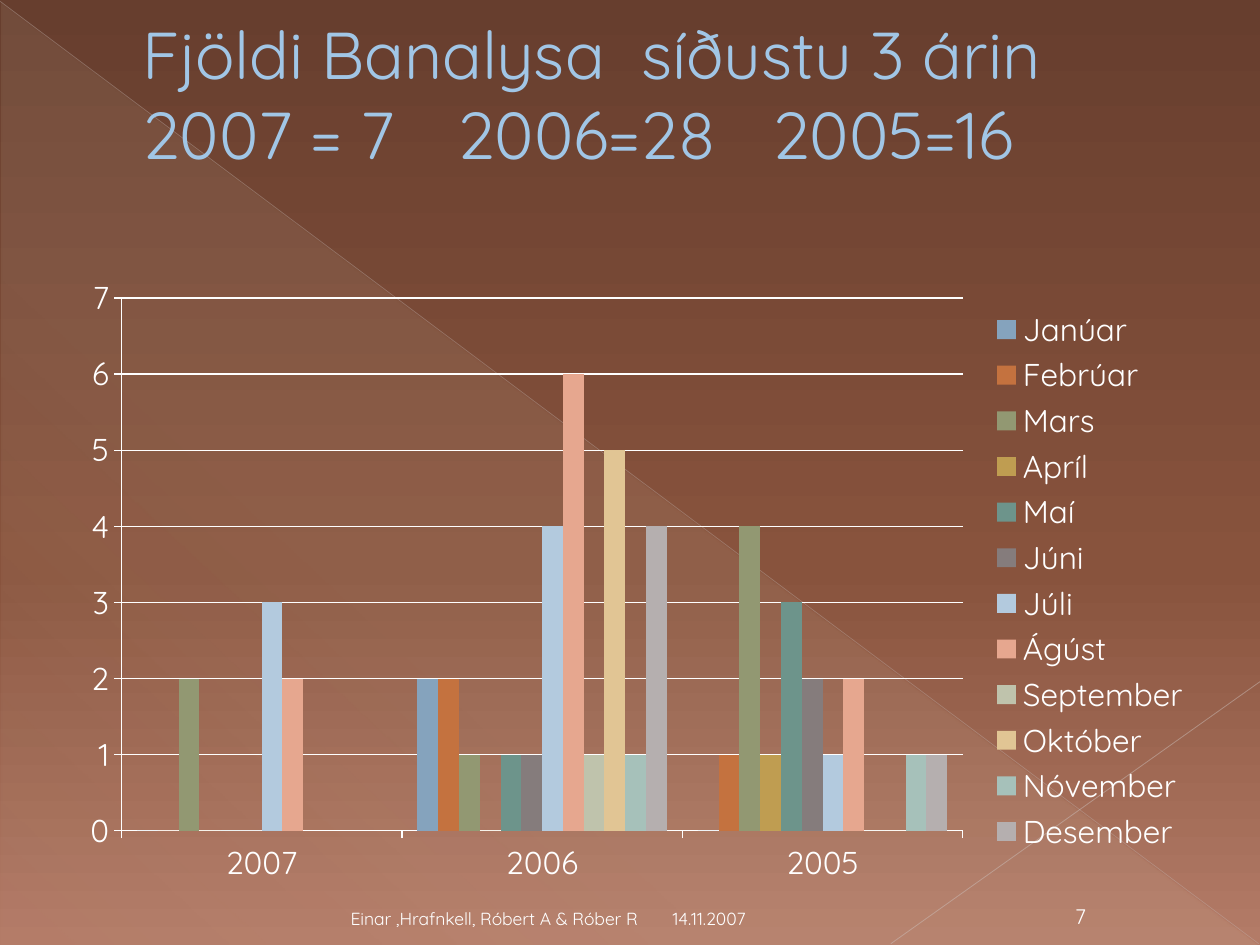
import lxml.etree
import pptx
import pptx.chart.data
import pptx.dml.color
import pptx.enum.chart
import pptx.enum.shapes
import pptx.enum.text
import pptx.oxml
import pptx.oxml.ns
import pptx.util

Inches, Pt = pptx.util.Inches, pptx.util.Pt
qn = pptx.oxml.ns.qn
Align, Anchor = pptx.enum.text.PP_ALIGN, pptx.enum.text.MSO_ANCHOR

TITLE = "Fjöldi Banalysa  síðustu 3 árin\v2007 = 7\t2006=28\t2005=16\v"
YEARS = ["2007", "2006", "2005"]
MONTHS = [
    ("Janúar", (0, 2, 0), "85A3BD"),
    ("Febrúar", (0, 2, 1), "C4723F"),
    ("Mars", (2, 1, 4), "929872"),
    ("Apríl ", (0, 0, 1), "BF9D51"),
    ("Maí", (0, 1, 3), "6D948B"),
    ("Júni", (0, 1, 2), "857C7C"),
    ("Júli ", (3, 4, 1), "B3CADE"),
    ("Ágúst", (2, 6, 2), "E6A78F"),
    ("September", (None, 1, 0), "BFC3AC"),
    ("Október", (None, 5, 0), "E1C594"),
    ("Nóvember", (None, 1, 1), "A6C1BA"),
    ("Desember", (None, 4, 1), "B5AFAF"),
]
FOOTERS = [
    ("14.11.2007", (5.24, 7.09, 2.33, 0.33), "small", Align.LEFT),
    ("7", (8.3, 7.09, 0.55, 0.33), "number", Align.CENTER),
    ("Einar ,Hrafnkell, Róbert A & Róber R", (0.5, 7.09, 4.66, 0.33), "small", Align.RIGHT),
]
# start, end, colour, width in points, opacity in percent
RULES = [
    ((0, 0.01), (9.99, 7.49), "C8BCB8", 0.39, 35),
    ((10, 5.41), (7.07, 7.49), "CEC3BF", 0.47, 45),
]
THEME = {
    "font": "Quicksand",
    "text": "FFFFFF",
    "title": "A1C6E6",
    "sizes": {"title": 37.8, "chart": 18, "number": 12, "small": 10},
    # position, colour, opacity, all positions and opacities in percent
    "background": [(0, "673E2E", 100), (60, "88533D", 100), (100, "B37B67", 100)],
    "triangle": [(0, "EBDDC3", 10), (70, "EBDDC3", 8), (100, "EBDDC3", 1)],
}


def rgb(value):
    return pptx.dml.color.RGBColor.from_string(value)


def set_opacity(color_element, percent):
    alpha = lxml.etree.SubElement(color_element, qn("a:alpha"))
    alpha.set("val", str(percent * 1000))


def set_gradient(owner, fill, stops, angle):
    """Fill with stops of (position, colour, opacity), the angle clockwise."""
    fill.gradient()
    gradient = next(owner.element.iter(qn("a:gradFill")))
    for child in list(gradient):
        gradient.remove(child)
    stop_list = lxml.etree.SubElement(gradient, qn("a:gsLst"))
    for position, color, opacity in stops:
        stop = lxml.etree.SubElement(stop_list, qn("a:gs"), pos=str(position * 1000))
        color_element = lxml.etree.SubElement(stop, qn("a:srgbClr"), val=color)
        set_opacity(color_element, opacity)
    lxml.etree.SubElement(gradient, qn("a:lin"), ang=str(angle * 60000), scaled="0")


def add_text(slide, text, at, size, color=THEME["text"], align=Align.LEFT,
             anchor=Anchor.BOTTOM, indent=0):
    box = slide.shapes.add_textbox(*map(Inches, at))
    frame = box.text_frame
    frame.word_wrap = True
    frame.vertical_anchor = anchor
    para = frame.paragraphs[0]
    para.text = text
    para.alignment = align
    if indent:
        properties = para._p.get_or_add_pPr()
        properties.set("marL", str(Inches(indent)))
        properties.set("indent", "0")
    for font in [para.font] + [span.font for span in para.runs]:
        font.name = THEME["font"]
        font.size = Pt(THEME["sizes"][size])
        font.color.rgb = rgb(color)


def add_rule(slide, start, end, color, width, opacity):
    rule = slide.shapes.add_connector(
        pptx.enum.shapes.MSO_CONNECTOR.STRAIGHT, *map(Inches, start + end))
    rule.line.color.rgb = rgb(color)
    rule.line.width = Pt(width)
    set_opacity(next(rule.element.iter(qn("a:srgbClr"))), opacity)
    lxml.etree.SubElement(rule.element.spPr, qn("a:effectLst"))


def add_backdrop(slide):
    set_gradient(slide, slide.background.fill, THEME["background"], 90)
    triangle = slide.shapes.add_shape(
        pptx.enum.shapes.MSO_SHAPE.RIGHT_TRIANGLE,
        *map(Inches, (0.01, 0.02, 9.98, 7.48)))
    triangle.shadow.inherit = False
    triangle.line.fill.background()
    set_gradient(triangle, triangle.fill, THEME["triangle"], 133)
    for rule in RULES:
        add_rule(slide, *rule)


def place_part(part, x, y, w, h, inner=False):
    """Fix a plot area or legend at fractions of the chart's size."""
    for old in part.findall(qn("c:layout")):
        part.remove(old)
    layout = part.makeelement(qn("c:layout"))
    manual = lxml.etree.SubElement(layout, qn("c:manualLayout"))
    values = [("layoutTarget", "inner")] if inner else []
    values += [("xMode", "edge"), ("yMode", "edge"), ("x", x), ("y", y), ("w", w), ("h", h)]
    for name, value in values:
        lxml.etree.SubElement(manual, qn("c:" + name), val=str(value))
    position = part.find(qn("c:legendPos"))
    part.insert(0 if position is None else 1, layout)


def add_month_chart(slide):
    data = pptx.chart.data.CategoryChartData()
    data.categories = YEARS
    for name, counts, _ in MONTHS:
        data.add_series(name, counts)
    kinds = pptx.enum.chart
    chart = slide.shapes.add_chart(
        kinds.XL_CHART_TYPE.COLUMN_CLUSTERED,
        *map(Inches, (0.55, 2.11, 9, 5)), data).chart
    chart.has_title = False
    chart.font.name = THEME["font"]
    chart.font.size = Pt(THEME["sizes"]["chart"])
    chart.font.color.rgb = rgb(THEME["text"])

    plot = chart.plots[0]
    plot.vary_by_categories = False
    plot.gap_width, plot.overlap = 150, 0
    for series, (_, _, color) in zip(plot.series, MONTHS):
        series.format.fill.solid()
        series.format.fill.fore_color.rgb = rgb(color)
        series.invert_if_negative = False

    counts_axis = chart.value_axis
    counts_axis.minimum_scale, counts_axis.maximum_scale = 0, 7
    counts_axis.major_unit = 1
    counts_axis.has_major_gridlines = True
    lines = [counts_axis.major_gridlines.format.line]
    for axis in (chart.category_axis, counts_axis):
        axis.major_tick_mark = kinds.XL_TICK_MARK.OUTSIDE
        lines.append(axis.format.line)
    for line in lines:
        line.color.rgb = rgb(THEME["text"])
        line.width = Pt(0.75)

    chart.has_legend = True
    chart.legend.position = kinds.XL_LEGEND_POSITION.RIGHT
    chart.legend.include_in_layout = False
    area = next(chart.element.iter(qn("c:plotArea")))
    legend = next(chart.element.iter(qn("c:legend")))
    place_part(area, 0.046, 0.051, 0.742, 0.846, inner=True)
    place_part(legend, 0.81, 0.06, 0.18, 0.88)


def main():
    deck = pptx.Presentation()
    deck.slide_width, deck.slide_height = Inches(10), Inches(7.5)
    slide = deck.slides.add_slide(deck.slide_layouts[6])
    add_backdrop(slide)
    add_text(slide, TITLE, (0.5, 0.29, 9, 1.53), "title", color=THEME["title"],
             anchor=Anchor.MIDDLE, indent=0.53)
    add_month_chart(slide)
    for text, at, size, align in FOOTERS:
        add_text(slide, text, at, size, align=align)
    deck.save("out.pptx")


if __name__ == "__main__":
    main()
